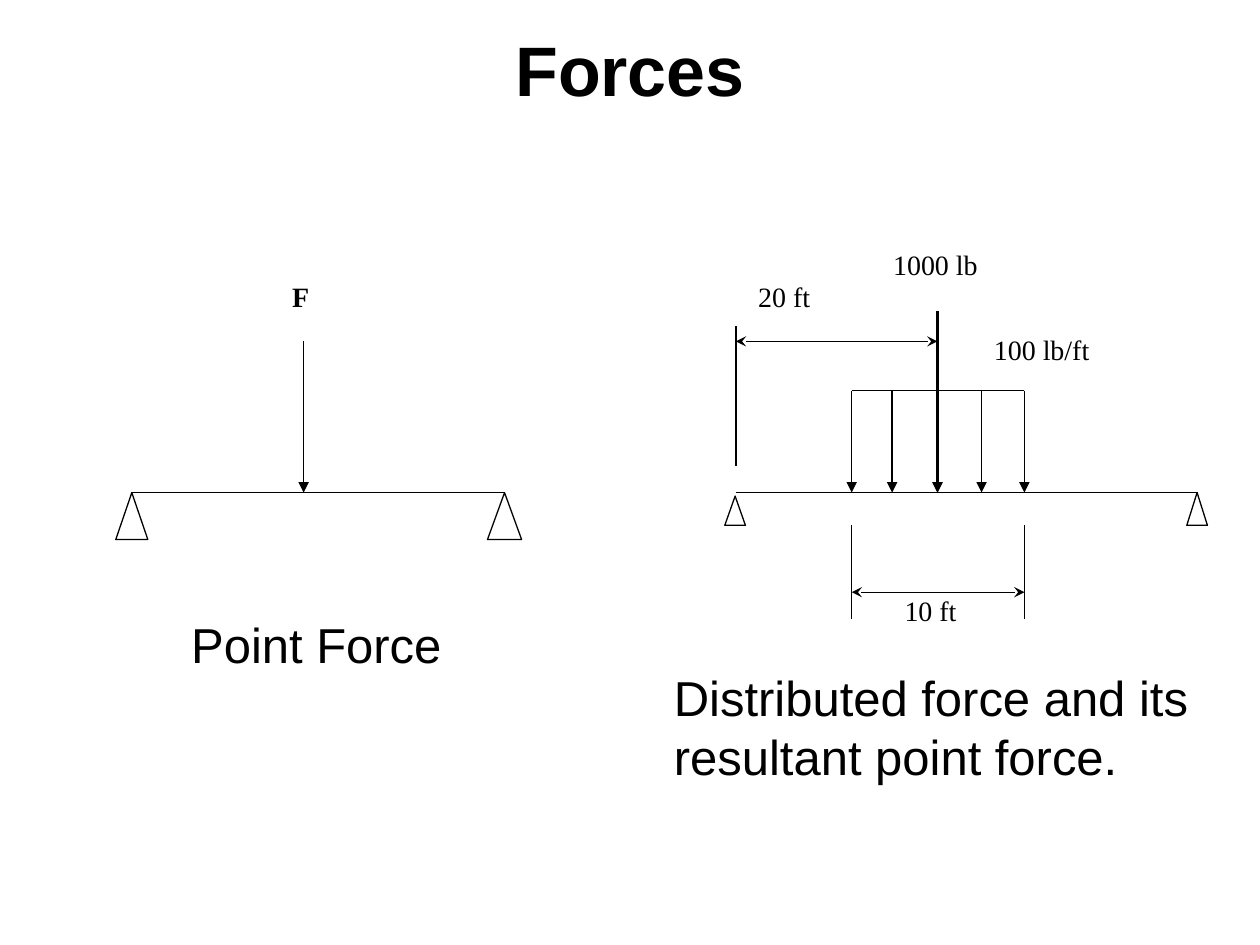
from lxml import etree
from pptx import Presentation
from pptx.dml.color import RGBColor
from pptx.enum.shapes import MSO_CONNECTOR, MSO_SHAPE
from pptx.enum.text import MSO_ANCHOR, MSO_AUTO_SIZE, PP_ALIGN
from pptx.oxml.ns import qn
from pptx.util import Pt

STRAIGHT = MSO_CONNECTOR.STRAIGHT
TRIANGLE = MSO_SHAPE.ISOSCELES_TRIANGLE
MIDDLE = MSO_ANCHOR.MIDDLE
CENTER = PP_ALIGN.CENTER
GROW = MSO_AUTO_SIZE.SHAPE_TO_FIT_TEXT

BLACK = RGBColor(0x00, 0x00, 0x00)
WHITE = RGBColor(0xFF, 0xFF, 0xFF)
THIN = 0.75
BEAM_Y = 281.5
LOAD_TOP = 223.2
DATUM_X = 420.5
RESULTANT_X = 535.7
LOAD_XS = [486.7, 509.8, RESULTANT_X, 560.9, 585.4]
LOAD_LEFT, LOAD_RIGHT = LOAD_XS[0], LOAD_XS[-1]
OFFSET_Y = 195.1
SPAN_Y = 338.4

deck = Presentation()
deck.slide_width, deck.slide_height = Pt(720), Pt(540)
page = deck.slides.add_slide(deck.slide_layouts[6])


def add_line(x1, y1, x2, y2, width=THIN, head=None, tail=None):
    """Draw a black line; head and tail name the arrowheads at its start and end."""
    line = page.shapes.add_connector(STRAIGHT, Pt(x1), Pt(y1), Pt(x2), Pt(y2))
    line.line.color.rgb = BLACK
    line.line.width = Pt(width)
    outline = line.line._get_or_add_ln()
    for tag, arrow in (("a:headEnd", head), ("a:tailEnd", tail)):
        if arrow:
            etree.SubElement(outline, qn(tag), type=arrow)
    etree.SubElement(line._element.spPr, qn("a:effectLst"))


def add_text(words, left, top, width, height, size=16, font="Times New Roman", bold=False):
    box = page.shapes.add_textbox(Pt(left), Pt(top), Pt(width), Pt(height))
    box.text_frame.word_wrap = True
    box.text_frame.text = words
    span = box.text_frame.paragraphs[0].runs[0]
    span.font.size = Pt(size)
    span.font.name = font
    span.font.bold = bold
    span.font.color.rgb = BLACK
    return box.text_frame


title = add_text("Forces", 0, 0, 720, 90, 40, "Arial", True)
title.vertical_anchor = MIDDLE
title.paragraphs[0].alignment = CENTER
title.paragraphs[0].line_spacing = 0.7

# Beams and their supports
add_line(74.9, BEAM_Y, 288.7, BEAM_Y)
add_line(DATUM_X, BEAM_Y, 684.7, BEAM_Y)
for left, top, width, height in [
    (66.2, BEAM_Y, 18.3, 26.8),
    (278.6, BEAM_Y, 19.5, 26.8),
    (414.2, 283.5, 11.8, 16.7),
    (678.2, BEAM_Y, 11.8, 18.7),
]:
    support = page.shapes.add_shape(TRIANGLE, Pt(left), Pt(top), Pt(width), Pt(height))
    support.shadow.inherit = False
    support.fill.solid()
    support.fill.fore_color.rgb = WHITE
    support.line.color.rgb = BLACK
    support.line.width = Pt(THIN)

# Point force
add_line(173.5, OFFSET_Y, 173.5, BEAM_Y, 1, tail="triangle")

# Distributed force and its resultant
for x in LOAD_XS:
    add_line(x, LOAD_TOP, x, BEAM_Y, tail="triangle")
add_line(LOAD_LEFT, LOAD_TOP, LOAD_RIGHT, LOAD_TOP)
add_line(RESULTANT_X, 178, RESULTANT_X, BEAM_Y, 1.5, tail="triangle")

# Dimensions
add_line(DATUM_X, 186.5, DATUM_X, 266.4)
for x in (LOAD_LEFT, LOAD_RIGHT):
    add_line(x, 300.2, x, 353.5)
for start, end, y in [
    (DATUM_X, RESULTANT_X, OFFSET_Y),
    (LOAD_LEFT, LOAD_RIGHT, SPAN_Y),
]:
    add_line(start, y, end, y, head="stealth", tail="stealth")

# Labels and captions
add_text("F", 159.8, 156.2, 35.3, 38.2, bold=True)
add_text("100 lb/ft", 560.9, 186.5, 79.2, 36.7)
add_text("1000 lb", 503.3, 138.2, 82.1, 40.3)
add_text("20 ft", 426.2, 156.2, 69.1, 48.2)
add_text("10 ft", 509.8, 335.5, 57.6, 36.7)

distributed = add_text(
    "Distributed force and its resultant point force.", 378, 378, 318.2, 74.2, 28, "Arial"
)
distributed.auto_size = GROW
point = add_text("Point Force", 102.2, 347.8, 157.7, 41, 28, "Arial")
point.word_wrap = False
point.auto_size = GROW

deck.save("out.pptx")
